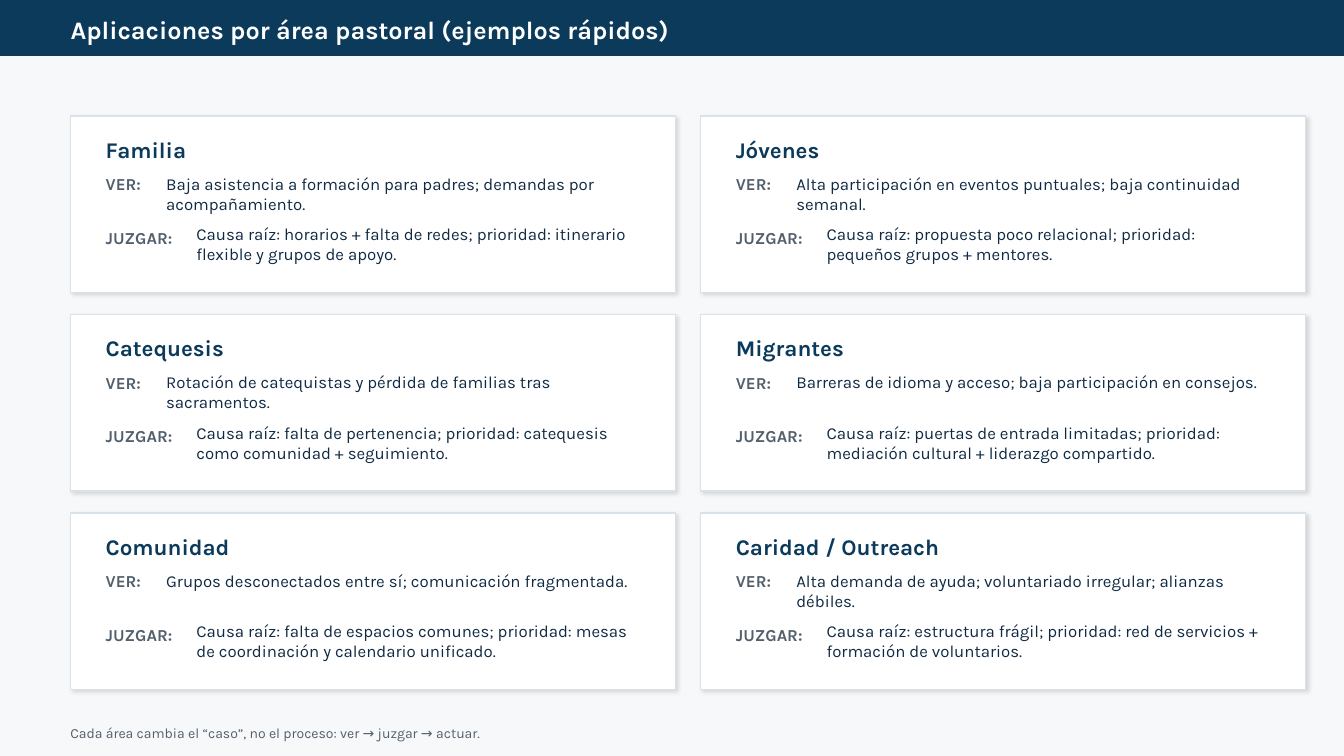
from dataclasses import dataclass
from lxml import etree
from pptx import Presentation
from pptx import util as u
from pptx.dml.color import RGBColor
from pptx.enum import shapes, text
from pptx.oxml import ns

TITLE = "Aplicaciones por área pastoral (ejemplos rápidos)"
NOTE = "Cada área cambia el “caso”, no el proceso: ver → juzgar → actuar."
AREAS = [
    ("Familia",
     "Baja asistencia a formación para padres; demandas por acompañamiento.",
     "Causa raíz: horarios + falta de redes; prioridad: itinerario flexible y grupos de apoyo."),
    ("Jóvenes",
     "Alta participación en eventos puntuales; baja continuidad semanal.",
     "Causa raíz: propuesta poco relacional; prioridad: pequeños grupos + mentores."),
    ("Catequesis",
     "Rotación de catequistas y pérdida de familias tras sacramentos.",
     "Causa raíz: falta de pertenencia; prioridad: catequesis como comunidad + seguimiento."),
    ("Migrantes",
     "Barreras de idioma y acceso; baja participación en consejos.",
     "Causa raíz: puertas de entrada limitadas; prioridad: mediación cultural + liderazgo compartido."),
    ("Comunidad",
     "Grupos desconectados entre sí; comunicación fragmentada.",
     "Causa raíz: falta de espacios comunes; prioridad: mesas de coordinación y calendario unificado."),
    ("Caridad / Outreach",
     "Alta demanda de ayuda; voluntariado irregular; alianzas débiles.",
     "Causa raíz: estructura frágil; prioridad: red de servicios + formación de voluntarios."),
]


@dataclass(frozen=True)
class Theme:
    font: str = "Karla"
    navy: str = "0B3A5B"
    ink: str = "102A43"
    gray: str = "52606D"
    edge: str = "D9E2EC"
    white: str = "FFFFFF"
    page: str = "F7F8FA"
    shade: str = "000000"
    title: int = 18
    head: int = 16
    body: int = 12
    note: int = 10


T = Theme()
WIDE, HIGH = 13.33, 7.5
COLS = 2
LEFT, TOP = 0.7, 1.15
CARD_W, CARD_H = 6, 1.75
GAP_X, GAP_Y = 0.25, 0.22
PAD = 0.25
INNER = CARD_W - 2 * PAD
VER_W, JUZ_W = 0.6, 0.9


def rgb(code):
    return RGBColor.from_string(code)


def place(shape, box):
    shape.left, shape.top, shape.width, shape.height = map(u.Inches, box)


def write(shape, words, size, color, bold=False, mid=True):
    frame = shape.text_frame
    frame.word_wrap = True
    frame.auto_size = text.MSO_AUTO_SIZE.NONE
    frame.vertical_anchor = text.MSO_ANCHOR.MIDDLE if mid else text.MSO_ANCHOR.TOP
    frame.text = words
    para = frame.paragraphs[0]
    para.alignment = text.PP_ALIGN.LEFT
    font = para.font
    font.name, font.size, font.bold = T.font, u.Pt(size), bold
    font.color.rgb = rgb(color)


def label(slide, box, *args, **opts):
    write(slide.shapes.add_textbox(*map(u.Inches, box)), *args, **opts)


def panel(slide, box, fill, line):
    shape = slide.shapes.add_shape(shapes.MSO_SHAPE.RECTANGLE, *map(u.Inches, box))
    shape.shadow.inherit = False
    shape.fill.solid()
    shape.fill.fore_color.rgb = rgb(fill)
    shape.line.color.rgb = rgb(line)
    shape.line.width = u.Pt(1)
    return shape


def cast(shape):
    glow = shape.element.spPr.find(ns.qn("a:effectLst"))
    outer = etree.SubElement(glow, ns.qn("a:outerShdw"), blurRad=str(u.Pt(3)),
                             dist=str(u.Pt(1.5)), dir=str(45 * 60000),
                             algn="tl", rotWithShape="0")
    color = etree.SubElement(outer, ns.qn("a:srgbClr"), val=T.shade)
    etree.SubElement(color, ns.qn("a:alpha"), val="12000")


def card(slide, index, area):
    row, col = divmod(index, COLS)
    x = LEFT + col * (CARD_W + GAP_X)
    y = TOP + row * (CARD_H + GAP_Y)
    name, see, judge = area
    cast(panel(slide, (x, y, CARD_W, CARD_H), T.white, T.edge))
    x += PAD
    label(slide, (x, y + 0.18, INNER, 0.3), name, T.head, T.navy, bold=True)
    rows = [("VER:", see, VER_W, 0.55, 0.52, 0.5),
            ("JUZGAR:", judge, JUZ_W, 1.08, 1.02, 0.68)]
    for tag, words, wide, tag_y, text_y, high in rows:
        label(slide, (x, y + tag_y, wide, 0.25), tag, T.body, T.gray, bold=True)
        label(slide, (x + wide, y + text_y, INNER - wide - 0, high),
              words, T.body, T.ink, mid=False)


def main():
    deck = Presentation()
    deck.slide_width, deck.slide_height = u.Inches(WIDE), u.Inches(HIGH)
    slide = deck.slides.add_slide(deck.slide_layouts[5])
    slide.background.fill.solid()
    slide.background.fill.fore_color.rgb = rgb(T.page)
    title = slide.shapes.title
    bar = panel(slide, (0, 0, WIDE, 0.55), T.navy, T.navy)
    title.element.addprevious(bar.element)
    place(title, (0.6, 0.12, 12.2, 0.35))
    write(title, TITLE, T.title, T.white, bold=True)
    label(slide, (0.6, 7.15, 12.2, 0.25), NOTE, T.note, T.gray)
    for index, area in enumerate(AREAS):
        card(slide, index, area)
    deck.save("out.pptx")


if __name__ == "__main__":
    main()
